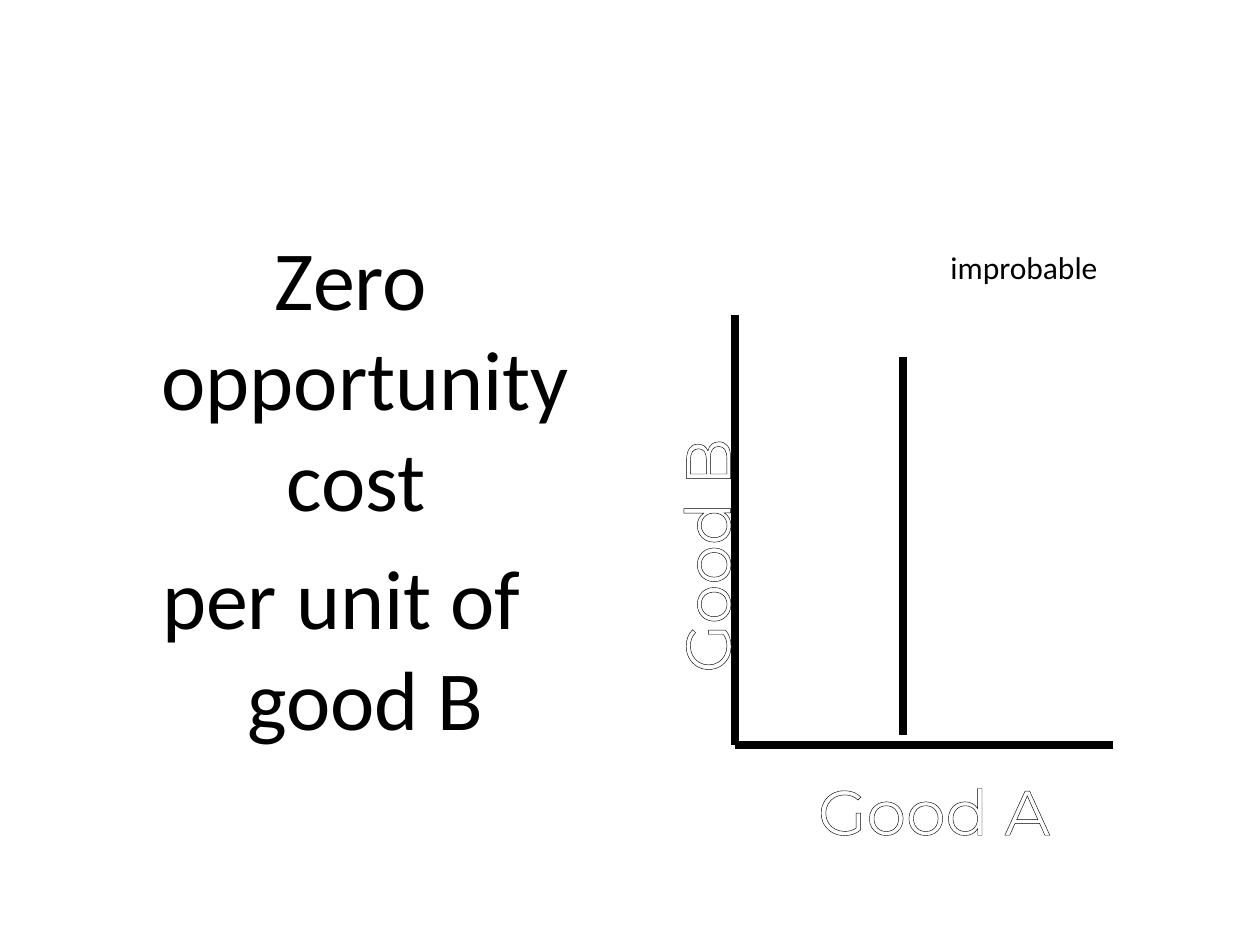
from dataclasses import dataclass

import lxml.etree
import pptx
import pptx.dml.color
import pptx.enum.shapes
import pptx.enum.text
import pptx.oxml.ns
import pptx.util

PX_PER_INCH = 126
BLACK = "000000"
WHITE = "FFFFFF"
HANG = 48
qn = pptx.oxml.ns.qn


@dataclass
class Line:
    x1: int
    y1: int
    x2: int
    y2: int


@dataclass
class Label:
    paragraphs: list[str]
    left: int
    top: int
    width: int
    height: int
    size: int
    font: str = "Calibri"
    color: str = BLACK
    outline: str | None = None
    rotation: int = 0
    wrap: bool = True
    hang: int = 0
    gap: float = 0


def px(n: int) -> pptx.util.Emu:
    return pptx.util.Emu(round(n * 914400 / PX_PER_INCH))


def rgb(color: str) -> pptx.dml.color.RGBColor:
    return pptx.dml.color.RGBColor.from_string(color)


def outline_text(r, color: str) -> None:
    """Draw a thin line around the letters of a run."""
    ln = lxml.etree.Element(qn("a:ln"), w=str(pptx.util.Pt(0.75)))
    fill = lxml.etree.SubElement(ln, qn("a:solidFill"))
    lxml.etree.SubElement(fill, qn("a:srgbClr"), val=color)
    r.font._element.insert(0, ln)


def draw_line(slide, line: Line) -> None:
    s = slide.shapes.add_connector(
        pptx.enum.shapes.MSO_CONNECTOR.STRAIGHT,
        px(line.x1), px(line.y1), px(line.x2), px(line.y2))
    s.line.color.rgb = rgb(BLACK)
    s.line.width = pptx.util.Pt(4.5)
    lxml.etree.SubElement(s._element.spPr, qn("a:effectLst"))


def draw_label(slide, label: Label) -> None:
    s = slide.shapes.add_textbox(
        px(label.left), px(label.top), px(label.width), px(label.height))
    s.rotation = label.rotation
    tf = s.text_frame
    tf.word_wrap = label.wrap
    if not label.wrap:
        # Side margins would leave too little width for a single line.
        tf.margin_left = tf.margin_right = 0
    for i, text in enumerate(label.paragraphs):
        p = tf.add_paragraph() if i else tf.paragraphs[0]
        p.alignment = pptx.enum.text.PP_ALIGN.CENTER
        if i:
            p.space_before = pptx.util.Pt(label.gap)
        if label.hang:
            pPr = p._p.get_or_add_pPr()
            pPr.set("marL", str(px(label.hang)))
            pPr.set("indent", str(-px(label.hang)))
        r = p.add_run()
        r.text = text
        r.font.name = label.font
        r.font.size = pptx.util.Pt(label.size)
        r.font.color.rgb = rgb(label.color)
        if label.outline:
            outline_text(r, label.outline)


def axis_label(text: str, left: int, top: int, rotation: int = 0) -> Label:
    return Label([text], left, top, 250, 55, 36, "Montserrat", WHITE,
                 outline=BLACK, rotation=rotation, wrap=False)


LINES = [
    Line(735, 315, 735, 745),   # good B axis
    Line(1113, 745, 735, 745),  # good A axis
    Line(903, 735, 903, 357),   # possibility line
]

LABELS = [
    Label([" Zero opportunity cost ", "per unit of good B"],
          63, 220, 557, 624, 48, hang=HANG, gap=9.6),
    axis_label("Good A", 809, 766),
    axis_label("Good B", 564, 528, rotation=270),
    Label(["improbable"], 851, 242, 346, 72, 18, hang=HANG),
]


def main() -> None:
    prs = pptx.Presentation()
    prs.slide_width, prs.slide_height = px(1260), px(945)
    slide = prs.slides.add_slide(prs.slide_layouts[6])
    for line in LINES:
        draw_line(slide, line)
    for label in LABELS:
        draw_label(slide, label)
    prs.save("out.pptx")


if __name__ == "__main__":
    main()
